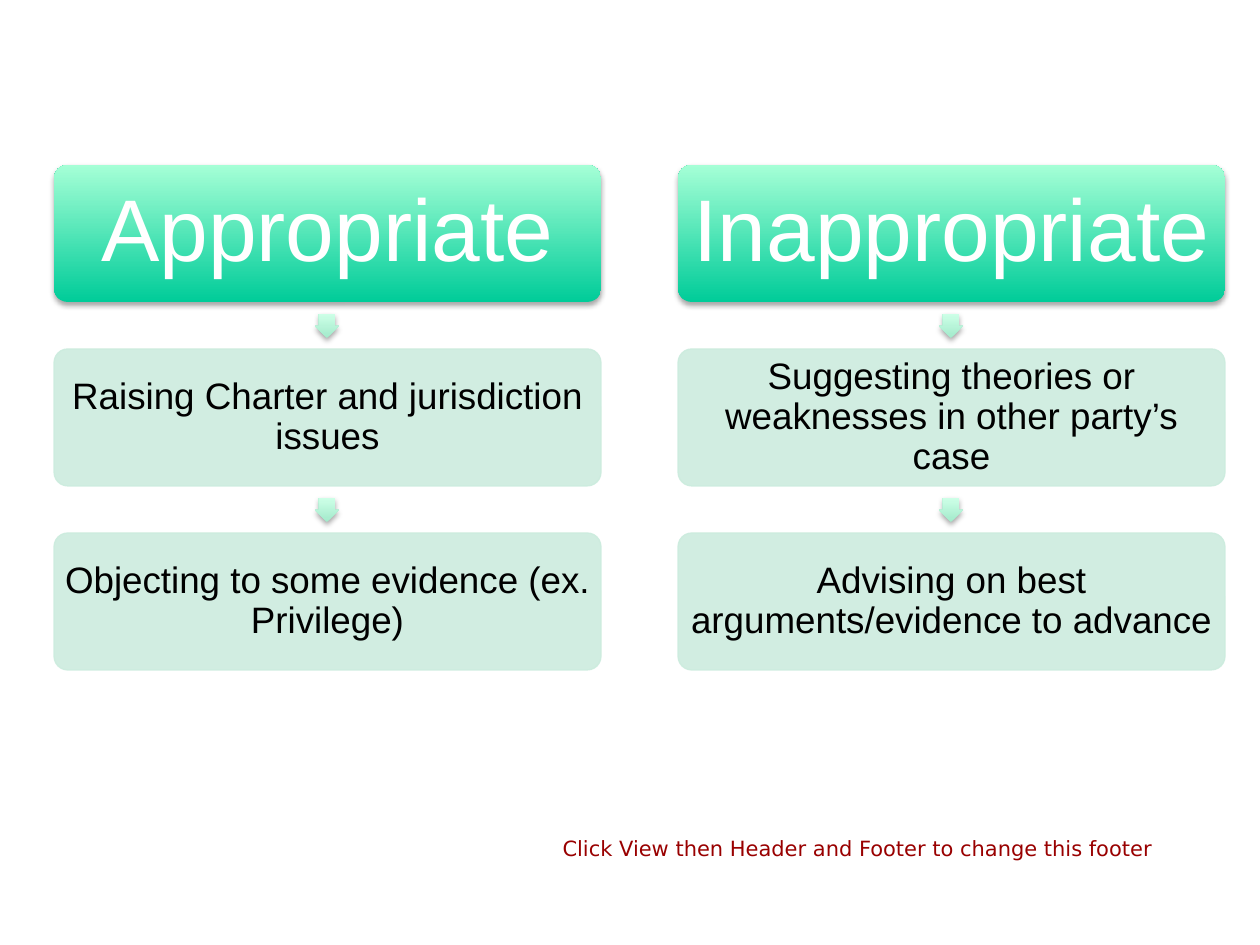
"""Builds a slide that contrasts appropriate and inappropriate steps in two flows."""
from dataclasses import dataclass
from typing import NamedTuple

from lxml.etree import SubElement
from pptx import Presentation
from pptx.dml.color import RGBColor
from pptx.enum.shapes import MSO_SHAPE
from pptx.enum.text import MSO_ANCHOR, PP_ALIGN
from pptx.oxml.ns import qn
from pptx.shapes.autoshape import Shape
from pptx.slide import Slide
from pptx.util import Emu, Inches, Pt

PX_PER_INCH = 126


@dataclass(frozen=True)
class Theme:
    """Colours, fonts and type sizes of the slide."""
    header_gradient: tuple[str, str] = ("00CC99", "A5FFD6")
    arrow_gradient: tuple[str, str] = ("A3EACB", "CDFFE7")
    step_fill: str = "CCECDE"
    header_text: str = "FFFFFF"
    step_text: str = "000000"
    footer_text: str = "990000"
    flow_font: str = "Arial"
    footer_font: str = "DejaVu Sans"
    header_size: int = 50
    step_size: int = 21
    footer_size: int = 12


class Box(NamedTuple):
    """A rectangle in px."""
    left: int
    top: int
    width: int
    height: int


@dataclass(frozen=True)
class Flow:
    """A heading with the steps below it."""
    heading: str
    steps: tuple[str, ...]


THEME = Theme()
FIRST_CARD = Box(54, 165, 547, 137)
COLUMN_PITCH, ROW_PITCH = 624, 184
ARROW_SIZE = 24
HEADER_INSET, STEP_INSET = 9, 4
FOOTER_BOX = Box(535, 829, 630, 63)
FOOTER = "Click View then Header and Footer to change this footer"
FLOWS = (
    Flow("Appropriate", (
        "Raising Charter and jurisdiction issues",
        "Objecting to some evidence (ex. Privilege)",
    )),
    Flow("Inappropriate", (
        "Suggesting theories or weaknesses in other party’s case",
        "Advising on best arguments/evidence to advance",
    )),
)


def px(length: int) -> Emu:
    """Turn px into EMU."""
    return Emu(round(length * Inches(1) / PX_PER_INCH))


def add_preset(slide: Slide, preset: MSO_SHAPE, box: Box) -> Shape:
    """Add a preset shape without the default shadow."""
    shape = slide.shapes.add_shape(preset, *map(px, box))
    shape.shadow.inherit = False
    return shape


def paint_raised(shape: Shape, gradient: tuple[str, str]) -> None:
    """Give a shape an upward gradient and a soft shadow below."""
    shape.line.fill.background()
    shape.fill.gradient()
    shape.fill.gradient_angle = 90
    for stop, colour in zip(shape.fill.gradient_stops, gradient):
        stop.color.rgb = RGBColor.from_string(colour)
    effects = shape.element.spPr.find(qn("a:effectLst"))
    shadow = SubElement(effects, qn("a:outerShdw"), blurRad=str(Pt(3.1)),
                        dist=str(Pt(1.8)), dir="5400000", rotWithShape="0")
    black = SubElement(shadow, qn("a:srgbClr"), val="000000")
    SubElement(black, qn("a:alpha"), val="35000")


def paint_step(shape: Shape) -> None:
    """Give a step its slightly transparent fill and outline."""
    shape.fill.solid()
    shape.line.width = Pt(0.75)
    for part in (shape.fill.fore_color, shape.line.color):
        part.rgb = RGBColor.from_string(THEME.step_fill)
    for colour in shape.element.spPr.iter(qn("a:srgbClr")):
        SubElement(colour, qn("a:alpha"), val="90000")


def write(shape: Shape, wording: str, font: str, size: int, colour: str,
          align: PP_ALIGN) -> None:
    """Write one formatted paragraph into a shape."""
    shape.text_frame.word_wrap = True
    paragraph = shape.text_frame.paragraphs[0]
    paragraph.text = wording
    paragraph.alignment = align
    paragraph.font.name = font
    paragraph.font.size = Pt(size)
    paragraph.font.color.rgb = RGBColor.from_string(colour)


def add_card(slide: Slide, box: Box, wording: str, is_header: bool) -> None:
    """Add a rounded card holding a heading or a step."""
    card = add_preset(slide, MSO_SHAPE.ROUNDED_RECTANGLE, box)
    card.adjustments[0] = 0.1
    if is_header:
        paint_raised(card, THEME.header_gradient)
        size, colour, inset = THEME.header_size, THEME.header_text, HEADER_INSET
    else:
        paint_step(card)
        size, colour, inset = THEME.step_size, THEME.step_text, STEP_INSET
    frame = card.text_frame
    frame.margin_left = frame.margin_right = px(inset)
    frame.margin_top = frame.margin_bottom = px(inset)
    frame.vertical_anchor = MSO_ANCHOR.MIDDLE
    write(card, wording, THEME.flow_font, size, colour, PP_ALIGN.CENTER)
    frame.paragraphs[0].line_spacing = 0.9


def add_arrow(slide: Slide, card: Box) -> None:
    """Add a down arrow centred in the gap above a card."""
    gap = ROW_PITCH - card.height
    box = Box(card.left + (card.width - ARROW_SIZE) // 2,
              card.top - (gap + ARROW_SIZE) // 2, ARROW_SIZE, ARROW_SIZE)
    arrow = add_preset(slide, MSO_SHAPE.DOWN_ARROW, box)
    arrow.adjustments[0] = 0.667
    arrow.adjustments[1] = 0.5
    paint_raised(arrow, THEME.arrow_gradient)


def add_flow(slide: Slide, flow: Flow, column: int) -> None:
    """Add a column of cards joined by arrows."""
    left = FIRST_CARD.left + column * COLUMN_PITCH
    for row, wording in enumerate((flow.heading, *flow.steps)):
        card = FIRST_CARD._replace(left=left, top=FIRST_CARD.top + row * ROW_PITCH)
        if row:
            add_arrow(slide, card)
        add_card(slide, card, wording, is_header=row == 0)


def main() -> None:
    """Build and save the slide."""
    deck = Presentation()
    deck.slide_width, deck.slide_height = px(1260), px(945)
    slide = deck.slides.add_slide(deck.slide_layouts.get_by_name("Blank"))
    for column, flow in enumerate(FLOWS):
        add_flow(slide, flow, column)
    footer = slide.shapes.add_textbox(*map(px, FOOTER_BOX))
    write(footer, FOOTER, THEME.footer_font, THEME.footer_size,
          THEME.footer_text, PP_ALIGN.RIGHT)
    deck.save("out.pptx")


if __name__ == "__main__":
    main()
